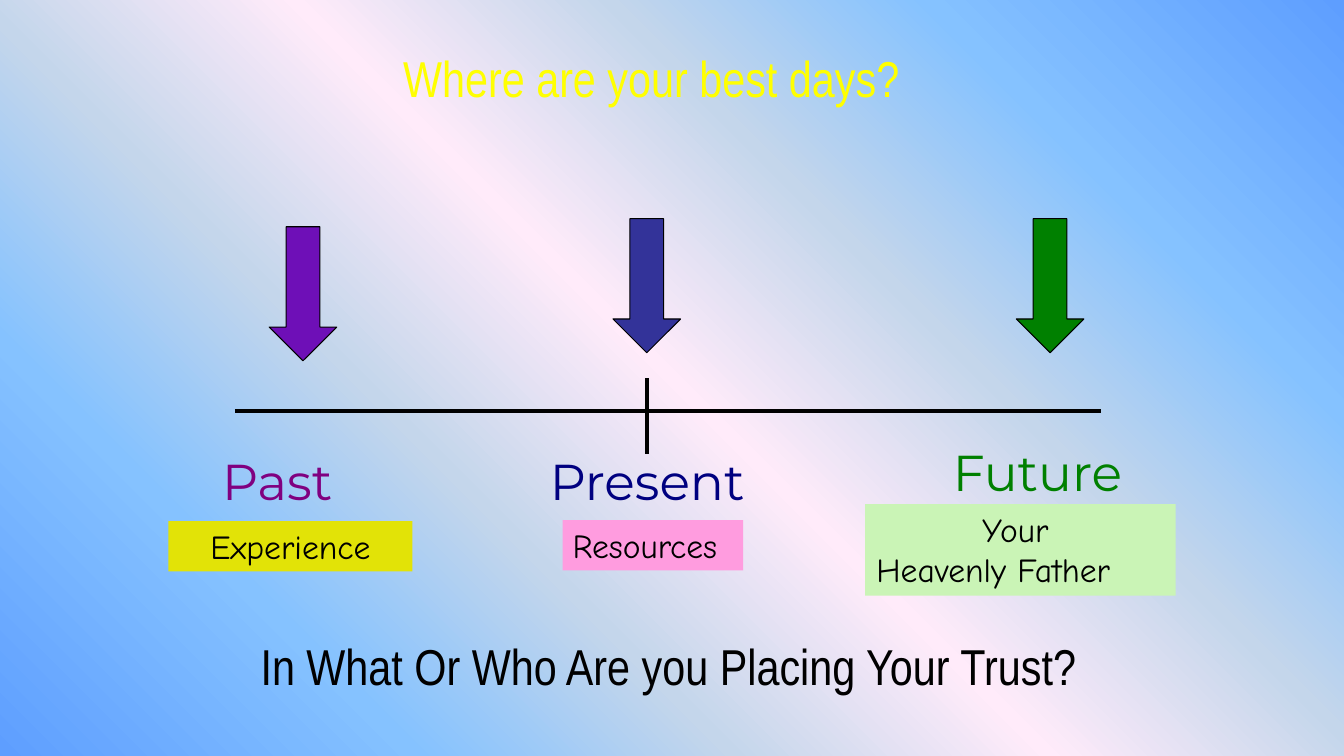
from copy import deepcopy

from pptx import Presentation
from pptx.dml.color import RGBColor
from pptx.enum.shapes import MSO_CONNECTOR, MSO_SHAPE
from pptx.enum.text import MSO_ANCHOR, MSO_AUTO_SIZE as FIT, PP_ALIGN as AL
from pptx.oxml.ns import qn
from pptx.util import Inches, Pt

# Content
TITLE = "Where are your best days?"
QUESTION = "In What Or Who Are you Placing Your Trust?"
C = {"black": "000000", "yellow": "FFFF00",
     "past": "800080", "present": "000080", "future": "008000",
     "past_arrow": "6E0FB7", "present_arrow": "333399", "future_arrow": "008000",
     "past_box": "E2E307", "present_box": "FF9CDF", "future_box": "CAF4B6"}
BACKGROUND = [(0, "5E9EFF"), (20, "85C2FF"), (35, "C4D6EB"), (50, "FFEBFA"),
              (65, "C4D6EB"), (80, "85C2FF"), (100, "5E9EFF")]
# Each era: name, colour key, label box, arrow left and top
ERAS = [("Past", "past", (2.25, 4.42, 1, 0.5), (2.67, 2.25)),
        ("Present", "present", (5.42, 4.42, 2, 0.5), (6.08, 2.17)),
        ("Future", "future", (9.5, 4.33, 1.58, 0.5), (10.08, 2.17))]
# Each source of trust: lines, colour key, box, text format
TRUST = [(["Experience"], "past_box", (1.67, 5.17, 2.42, 0.5), {}),
         (["Resources"], "present_box", (5.58, 5.16, 1.79, 0.5),
          {"align": AL.LEFT, "wrap": False}),
         (["Your", "Heavenly Father"], "future_box", (8.58, 5, 3.08, 0.91),
          {"insets": (0, 0.54), "indents": (0.44, 0)})]
LINES = [(2.33, 4.08, 10.92, 4.08), (6.42, 3.75, 6.42, 4.5)]
ARROW_SIZE = (0.67, 1.33)


def rgb(key):
    return RGBColor.from_string(C[key])


def inches(values):
    return [Inches(v) for v in values]


def write(sp, lines, size=36, font="Arial Narrow", color="black", align=AL.CENTER,
          wrap=False, fit=FIT.NONE, insets=(0.1, 0.1), indents=()):
    tf = sp.text_frame
    tf.word_wrap, tf.auto_size = wrap, fit
    tf.vertical_anchor = MSO_ANCHOR.TOP
    tf.margin_left, tf.margin_right = inches(insets)
    for i, line in enumerate(lines):
        p = tf.paragraphs[0] if i == 0 else tf.add_paragraph()
        p.alignment = align
        if indents:
            p._p.get_or_add_pPr().set("marL", str(Inches(indents[i])))
        r = p.add_run()
        r.text = line
        r.font.size, r.font.name = Pt(size), font
        r.font.color.rgb = rgb(color)


def add_filled(kind, box, color):
    sp = s.shapes.add_shape(kind, *inches(box))
    sp.shadow.inherit = False
    sp.fill.solid()
    sp.fill.fore_color.rgb = rgb(color)
    sp.line.fill.background()
    return sp


prs = Presentation()
prs.slide_width, prs.slide_height = Inches(13.33), Inches(7.5)
s = prs.slides.add_slide(prs.slide_layouts[5])

# Diagonal background gradient
fill = s.background.fill
fill.gradient()
fill.gradient_angle = 45
stops = next(s.element.iter(qn("a:gsLst")))
model = stops[0]
for _ in BACKGROUND[len(stops):]:
    stops.append(deepcopy(model))
for stop, (position, color) in zip(fill.gradient_stops, BACKGROUND):
    stop.position = position / 100
    stop.color.rgb = RGBColor.from_string(color)

# Title
title = s.shapes.title
title.left, title.top, title.width, title.height = inches((3.75, 0.42, 5.42, 0.61))
write(title, [TITLE], color="yellow")

# Timeline
for ends in LINES:
    line = s.shapes.add_connector(MSO_CONNECTOR.STRAIGHT, *inches(ends))
    line.line.color.rgb, line.line.width = rgb("black"), Pt(3)
    sp_pr = line._element.spPr
    sp_pr.append(sp_pr.makeelement(qn("a:effectLst"), {}))

# Era labels and arrows
for name, key, box, corner in ERAS:
    write(s.shapes.add_textbox(*inches(box)), [name], font="Montserrat", color=key)
    arrow = add_filled(MSO_SHAPE.DOWN_ARROW, corner + ARROW_SIZE, key + "_arrow")
    arrow.line.color.rgb, arrow.line.width = rgb("black"), Pt(0.75)

# Sources of trust
for lines, key, box, fmt in TRUST:
    write(add_filled(MSO_SHAPE.RECTANGLE, box, key), lines,
          **{"size": 24, "font": "Comic Neue", "wrap": True,
             "fit": FIT.SHAPE_TO_FIT_TEXT, **fmt})

# Closing question
write(s.shapes.add_textbox(*inches((2.17, 6.25, 8.92, 0.92))), [QUESTION])

prs.save("out.pptx")
